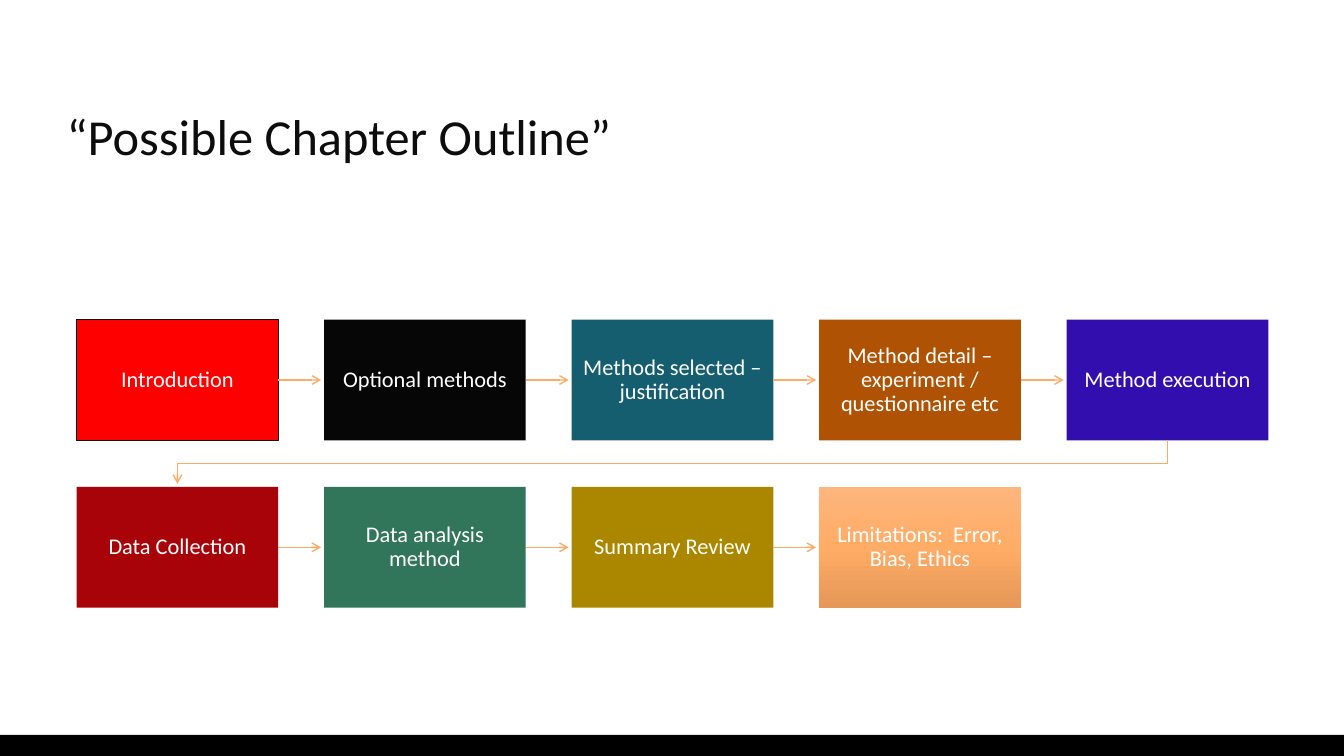
from copy import deepcopy
from dataclasses import dataclass

from pptx import Presentation
from pptx.dml.color import RGBColor
from pptx.enum.shapes import MSO_CONNECTOR, MSO_SHAPE
from pptx.enum.text import MSO_ANCHOR, PP_ALIGN
from pptx.oxml.ns import qn
from pptx.util import Inches, Pt
from lxml.etree import SubElement

# Content: label and fill of each step, row by row
TITLE = "“Possible Chapter Outline”"
STEP_ROWS = [
    [
        ("Introduction", "FF0000"),
        ("Optional methods", "060606"),
        ("Methods selected – justification", "145E70"),
        ("Method detail – experiment / questionnaire etc", "AF5203"),
        ("Method execution", "330EAE"),
    ],
    [
        ("Data Collection", "A80309"),
        ("Data analysis method", "31755A"),
        ("Summary Review", "AB8700"),
        ("Limitations:  Error, Bias, Ethics",
         [(0, "FEB67D"), (0.5, "FFAC66"), (1, "E59858")]),
    ],
]


@dataclass(frozen=True)
class Theme:
    font: str = "Calibri"
    ink: str = "0D0D0D"
    light: str = "FFFFFF"
    bar: str = "000000"
    arrow: str = "FCAC69"
    title_size: int = 36
    step_size: int = 16
    outline: float = 0.75
    arrow_width: float = 1


THEME = Theme()

# Grid measures in inches
LEFT, TOP = 0.76, 3.17
STEP_WIDTH, STEP_HEIGHT = 2, 1.2
COLUMN_PITCH, ROW_PITCH = 2.455, 1.66
ARROW_GAP = 0.03


def color(value):
    return RGBColor.from_string(value)


def write(frame, text, *, size, ink, align=PP_ALIGN.LEFT,
          anchor=MSO_ANCHOR.TOP, inset=(0.1, 0.05)):
    frame.word_wrap = True
    frame.vertical_anchor = anchor
    frame.margin_left = frame.margin_right = Inches(inset[0])
    frame.margin_top = frame.margin_bottom = Inches(inset[1])
    para = frame.paragraphs[0]
    para.alignment = align
    para.line_spacing = 0.9
    span = para.add_run()
    span.text = text
    span.font.name = THEME.font
    span.font.size = Pt(size)
    span.font.color.rgb = color(ink)


def fill_gradient(box, stops):
    box.fill.gradient()
    box.fill.gradient_angle = 270
    stop_list = box.fill._xPr.find(qn("a:gradFill")).find(qn("a:gsLst"))
    stop_list.append(deepcopy(stop_list[0]))
    for stop, (position, value) in zip(box.fill.gradient_stops, stops):
        stop.position = position
        stop.color.rgb = color(value)


def add_box(page, left, top, width, height, fill):
    box = page.shapes.add_shape(MSO_SHAPE.RECTANGLE, Inches(left), Inches(top),
                                Inches(width), Inches(height))
    box.shadow.inherit = False
    box.line.fill.background()
    if isinstance(fill, str):
        box.fill.solid()
        box.fill.fore_color.rgb = color(fill)
    else:
        fill_gradient(box, fill)
    return box


def style_arrow(arrow):
    arrow.line.color.rgb = color(THEME.arrow)
    arrow.line.width = Pt(THEME.arrow_width)
    SubElement(arrow.line._get_or_add_ln(), qn("a:tailEnd"), type="arrow")
    SubElement(arrow._element.spPr, qn("a:effectLst"))


def add_step_arrow(page, box, next_left):
    middle = box.top + box.height // 2
    arrow = page.shapes.add_connector(
        MSO_CONNECTOR.STRAIGHT, box.left + box.width, middle,
        next_left - Inches(ARROW_GAP), middle)
    arrow.begin_connect(box, 3)
    style_arrow(arrow)


def add_return_arrow(page, last, first):
    start_x = last.left + last.width // 2
    end_x = first.left + first.width // 2
    start_y = last.top + last.height
    turn_y = (start_y + first.top) // 2
    builder = page.shapes.build_freeform(start_x, start_y)
    builder.add_line_segments(
        [(start_x, turn_y), (end_x, turn_y),
         (end_x, first.top - Inches(ARROW_GAP))], close=False)
    arrow = builder.convert_to_shape()
    arrow.fill.background()
    style_arrow(arrow)


def main():
    deck = Presentation()
    deck.slide_width, deck.slide_height = Inches(13.33), Inches(7.5)
    page = deck.slides.add_slide(deck.slide_layouts[5])

    # Bottom bar and title
    add_box(page, 0, 7.29, 13.33, 0.21, THEME.bar)
    title = page.shapes.title
    title.left, title.top = Inches(0.56), Inches(1.06)
    title.width, title.height = Inches(12.21), Inches(0.79)
    write(title.text_frame, TITLE, size=THEME.title_size, ink=THEME.ink)

    # Steps
    rows = []
    for row, steps in enumerate(STEP_ROWS):
        boxes = []
        for column, (label, fill) in enumerate(steps):
            box = add_box(page, LEFT + column * COLUMN_PITCH,
                          TOP + row * ROW_PITCH, STEP_WIDTH, STEP_HEIGHT, fill)
            write(box.text_frame, label, size=THEME.step_size, ink=THEME.light,
                  align=PP_ALIGN.CENTER, anchor=MSO_ANCHOR.MIDDLE,
                  inset=(0.1, 0.1))
            boxes.append(box)
        rows.append(boxes)
    introduction = rows[0][0]
    introduction.line.color.rgb = color(THEME.ink)
    introduction.line.width = Pt(THEME.outline)

    # Arrows along each row, then back to the start of the next
    for boxes in rows:
        for box, following in zip(boxes, boxes[1:]):
            add_step_arrow(page, box, following.left)
    for upper, lower in zip(rows, rows[1:]):
        add_return_arrow(page, upper[-1], lower[0])

    deck.save("out.pptx")


if __name__ == "__main__":
    main()
